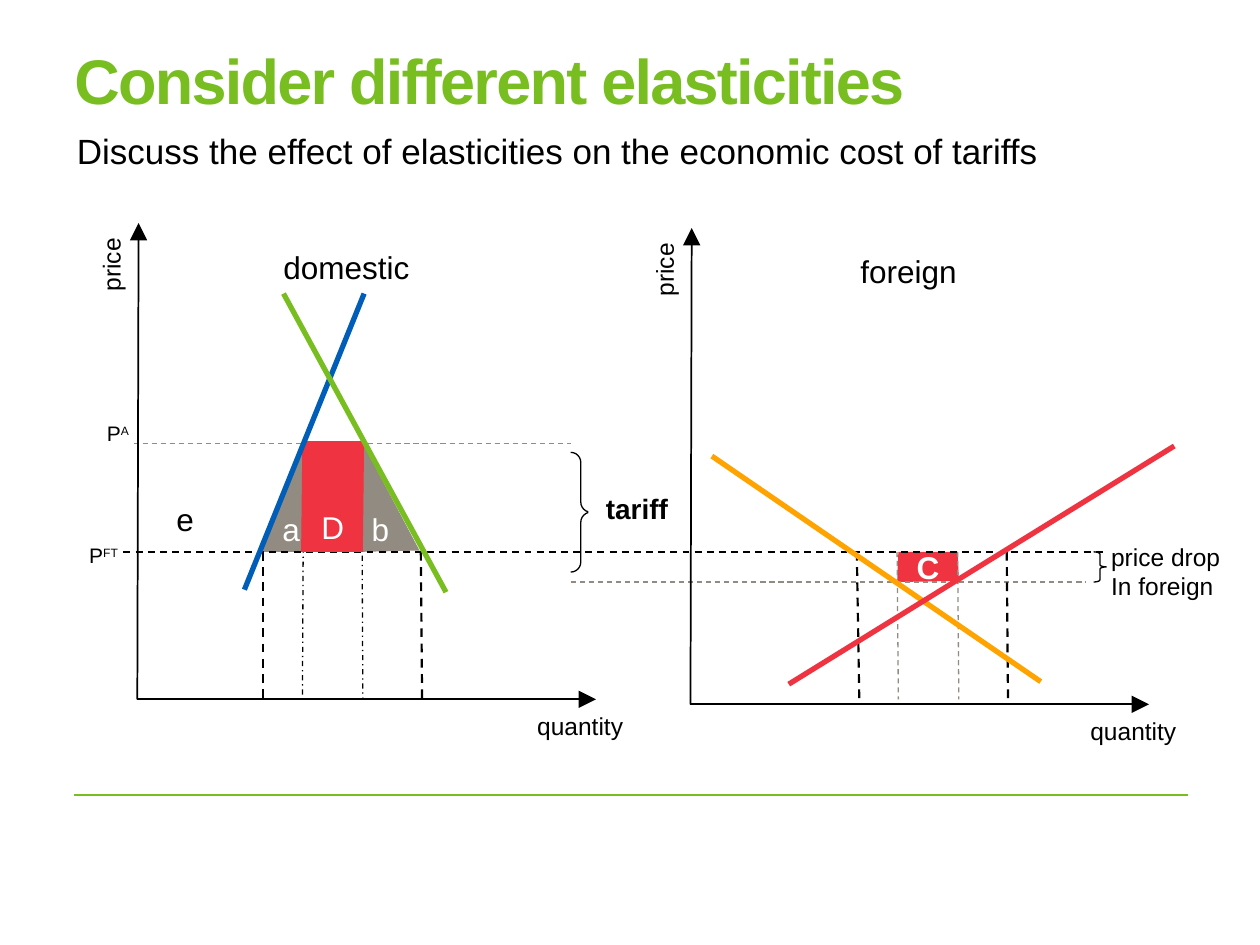
from pptx import Presentation
from pptx.dml.color import RGBColor
from pptx.enum.dml import MSO_LINE
from pptx.enum.shapes import MSO_CONNECTOR, MSO_SHAPE
from pptx.enum.text import MSO_ANCHOR, MSO_AUTO_SIZE, PP_ALIGN
from pptx.oxml.ns import qn
from pptx.util import Inches, Pt
from lxml.etree import SubElement

THEME = {
    "font": "Arial",
    "green": "78BE20", "gray": "928B81", "red": "EF3340", "blue": "005EB8",
    "gold": "FFA300", "black": "000000", "white": "FFFFFF",
    "title": 36, "lead": 20, "mark": 18, "tariff": 16, "axis": 14, "price": 12,
}
DASH, DOT = MSO_LINE.DASH, MSO_LINE.DASH_DOT
LEFT, MID = PP_ALIGN.LEFT, PP_ALIGN.CENTER

TITLE = "Consider different elasticities"
LEAD = "Discuss the effect of elasticities on the economic cost of tariffs"

# Price levels and the foot of the drop lines
HOME, FREE, DROP, FOOT = 3.52, 4.38, 4.62, 5.55

# Areas: points, colour
AREAS = [
    ([(2.88, HOME), (3.33, 4.37), (2.87, FREE)], "gray"),
    ([(2.41, HOME), (2.4, FREE), (2.07, FREE)], "gray"),
    ([(7.13, FREE), (7.12, DROP), (7.61, 4.61), (7.6, FREE)], "red"),
]
TAX = [(2.4, 3.5), (2.39, FREE), (2.88, FREE), (2.89, 3.5)]

# Guides: start, end, colour, width, dash
GUIDES = [
    ((0.98, FREE), (8.75, FREE), "black", 1, DASH),
    ((1.06, HOME), (4.53, HOME), "gray", 0.75, DASH),
    ((4.53, DROP), (8.62, DROP), "gray", 0.75, DASH),
    ((2.41, 3.67), (2.4, FOOT), "black", 0.75, DOT),
    ((2.87, 3.51), (2.88, FOOT), "black", 0.75, DOT),
] + [
    ((x, FREE), (end, FOOT), "black", 1.25, DASH)
    for x, end in [(2.09, 2.09), (3.34, 3.35), (6.8, 6.82), (7.99, 8)]
] + [
    ((x, FREE), (x + 0.01, FOOT), "gray", 0.75, DASH) for x in (7.12, 7.6)
]

# Braces: box, curve
BRACES = [((4.53, 3.59, 0.16, 0.95), 0.5), ((8.68, FREE, 0.1, 0.24), 0.17)]

# Curves: start, end, colour
CURVES = [
    ((1.94, 4.68), (2.89, 2.33), "blue"),
    ((2.25, 2.33), (3.54, 4.7), "green"),
    ((5.65, 3.62), (8.26, 5.41), "gold"),
    ((6.26, 5.43), (9.32, 3.54), "red"),
]

# Labels: text, box, size, colour, align, wrap, bold
LABELS = [
    ("a", (2.14, 4, 0.34, 0.4), "mark", "white", MID, False, False),
    ("b", (2.85, 4, 0.34, 0.4), "mark", "white", MID, False, False),
    ("C", (7.13, 4.3, 0.47, 0.4), "mark", "white", MID, True, True),
    ("e", (1.3, 3.92, 0.34, 0.4), "mark", "black", MID, False, False),
    ("price drop\nIn foreign", (8.72, 4.25, 1.26, 0.57), "axis", "black",
     LEFT, True, False),
    ("domestic", (2.15, 1.92, 1.21, 0.4), "mark", "black", LEFT, False, False),
    ("foreign", (6.73, 1.95, 0.97, 0.4), "mark", "black", LEFT, False, False),
]
# Price marks: superscript, box
MARKS = [("FT", (0.61, 4.26, 0.45, 0.3)), ("A", (0.75, 3.29, 0.4, 0.3))]
# Shift of each chart from the domestic one
CHARTS = [(0, 0), (4.39, 0.04)]


def tint(name):
    return RGBColor.from_string(THEME[name])


def inch(box):
    return [Inches(v) for v in box]


def add_run(para, text, size, color, bold=False):
    run = para.add_run()
    run.text = text
    font = run.font
    font.name, font.size, font.bold = THEME["font"], Pt(THEME[size]), bold
    font.color.rgb = tint(color)
    return run


def write(shape, text, size, color, align=LEFT, wrap=False, bold=False):
    frame = shape.text_frame
    frame.word_wrap = wrap
    frame.auto_size = MSO_AUTO_SIZE.SHAPE_TO_FIT_TEXT
    for i, row in enumerate(text.split("\n")):
        para = frame.add_paragraph() if i else frame.paragraphs[0]
        para.alignment = align
        add_run(para, row, size, color, bold)
    return frame


def add_text(slide, text, box, *style):
    shape = slide.shapes.add_textbox(*inch(box))
    write(shape, text, *style)
    return shape


def add_line(slide, start, end, color, width, dash=None, arrow=False):
    line = slide.shapes.add_connector(
        MSO_CONNECTOR.STRAIGHT, *inch(start), *inch(end))
    line.line.color.rgb = tint(color)
    line.line.width = Pt(width)
    if dash:
        line.line.dash_style = dash
    if arrow:
        tail = SubElement(line.line._get_or_add_ln(), qn("a:tailEnd"))
        tail.set("type", "triangle")
        tail.set("w", "lg")
        tail.set("len", "lg")
    SubElement(line._element.spPr, qn("a:effectLst"))


def fill(shape, color):
    shape.shadow.inherit = False
    shape.fill.solid()
    shape.fill.fore_color.rgb = tint(color)
    shape.line.fill.background()


def add_area(slide, points, color):
    pen = slide.shapes.build_freeform(*inch(points[0]), scale=1.0)
    pen.add_line_segments([inch(p) for p in points[1:]], close=True)
    area = pen.convert_to_shape()
    fill(area, color)
    return area


def add_head(slide):
    title = slide.shapes.title
    title.left, title.top, title.width, title.height = inch(
        (0.59, 0.42, 8.84, 0.49))
    frame = title.text_frame
    flush(frame)
    frame.word_wrap = True
    frame.auto_size = MSO_AUTO_SIZE.NONE
    frame.vertical_anchor = MSO_ANCHOR.TOP
    para = frame.paragraphs[0]
    para.alignment, para.line_spacing = LEFT, 0.85
    run = add_run(para, TITLE, "title", "green", True)
    run._r.get_or_add_rPr().set("spc", "-100")
    lead = add_text(slide, LEAD, (0.61, 1.03, 7.68, 0.34), "lead", "black")
    flush(lead.text_frame)


def flush(frame):
    frame.margin_left = frame.margin_right = 0
    frame.margin_top = frame.margin_bottom = 0


def add_axes(slide, dx, dy):
    base = (1.09 + dx, 5.55 + dy)
    for end in [(4.73 + dx, 5.55 + dy), (1.1 + dx, 1.77 + dy)]:
        add_line(slide, base, end, "black", 1, arrow=True)
    name = add_text(slide, "price", (0.57 + dx, 1.93 + dy, 0.63, 0.34),
                    "axis", "black", MID)
    name.rotation = 270
    add_text(slide, "quantity", (4.16 + dx, 5.59 + dy, 0.89, 0.34),
             "axis", "black", MID)


def main():
    deck = Presentation()
    deck.slide_width, deck.slide_height = Inches(10), Inches(7.5)
    slide = deck.slides.add_slide(deck.slide_layouts[5])
    add_line(slide, (0.59, 6.31), (9.43, 6.31), "green", 1)
    add_head(slide)

    # Areas, guides and braces
    for points, color in AREAS:
        add_area(slide, points, color)
    for guide in GUIDES:
        add_line(slide, *guide)
    for box, curve in BRACES:
        brace = slide.shapes.add_shape(MSO_SHAPE.RIGHT_BRACE, *inch(box))
        brace.shadow.inherit = False
        brace.fill.background()
        brace.line.color.rgb = tint("black")
        brace.line.width = Pt(0.75)
        brace.adjustments[0] = curve

    # Tariff name and revenue area
    tag = slide.shapes.add_shape(
        MSO_SHAPE.RECTANGLE, *inch((4.67, 3.85, 0.77, 0.37)))
    fill(tag, "white")
    frame = write(tag, "tariff", "tariff", "black", MID, True, True)
    frame.vertical_anchor = MSO_ANCHOR.TOP
    area = add_area(slide, TAX, "red")
    frame = write(area, "D", "mark", "white", MID, True)
    frame.auto_size = MSO_AUTO_SIZE.NONE
    frame.vertical_anchor = MSO_ANCHOR.BOTTOM

    # Labels and price marks
    for label in LABELS:
        add_text(slide, *label)
    for mark, box in MARKS:
        shape = add_text(slide, "P", box, "price", "black")
        run = add_run(shape.text_frame.paragraphs[0], mark, "price", "black")
        run._r.get_or_add_rPr().set("baseline", "30000")

    # Axes and curves
    for shift in CHARTS:
        add_axes(slide, *shift)
    for start, end, color in CURVES:
        add_line(slide, start, end, color, 3)
    deck.save("out.pptx")


if __name__ == "__main__":
    main()
